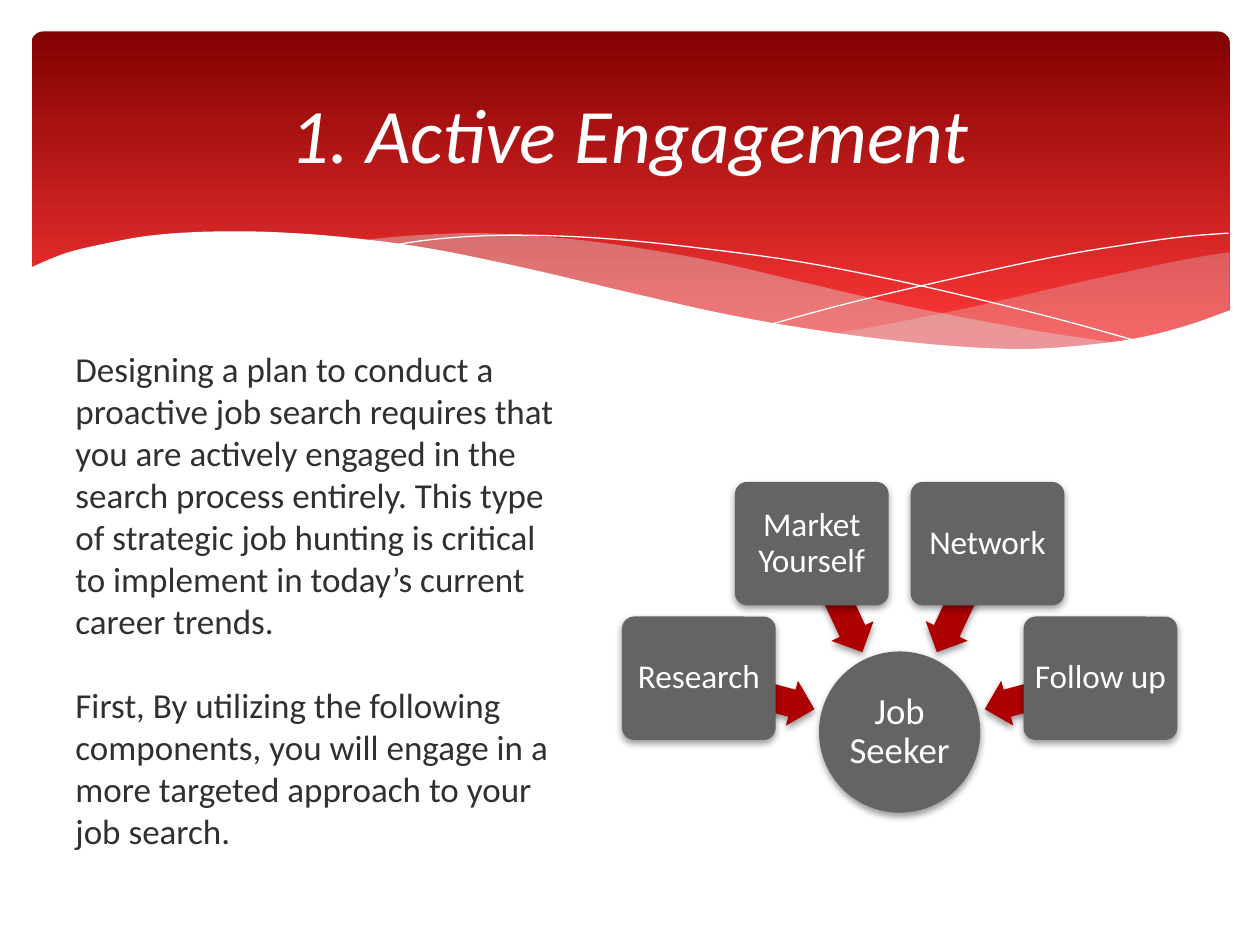
from math import cos, radians, sin

from lxml import etree
from pptx import Presentation
from pptx.dml.color import RGBColor
from pptx.enum.shapes import MSO_SHAPE
from pptx.enum.text import MSO_ANCHOR, PP_ALIGN
from pptx.oxml.ns import qn
from pptx.util import Inches, Pt

ROUNDED, ELLIPSE, LEFT_ARROW = MSO_SHAPE.ROUNDED_RECTANGLE, MSO_SHAPE.OVAL, MSO_SHAPE.LEFT_ARROW
LEFT, CENTER = PP_ALIGN.LEFT, PP_ALIGN.CENTER
TOP, MIDDLE = MSO_ANCHOR.TOP, MSO_ANCHOR.MIDDLE

WHITE = RGBColor(0xFF, 0xFF, 0xFF)
DARK_RED = RGBColor(0x82, 0x01, 0x01)
BRIGHT_RED = RGBColor(0xFE, 0x37, 0x37)
ARROW_RED = RGBColor(0xAD, 0x01, 0x01)
NODE_GRAY = RGBColor(0x64, 0x64, 0x64)
VEIL_GRAY = RGBColor(0xDE, 0xDE, 0xE0)
TEXT_GRAY = RGBColor(0x30, 0x30, 0x30)
FONT = "Calibri"

TITLE = "1. Active Engagement"
BODY = [
    "Designing a plan to conduct a proactive job search requires that you are actively engaged "
    "in the search process entirely. This type of strategic job hunting is critical to implement "
    "in today’s current career trends.",
    "First, By utilizing the following components, you will engage in a more targeted approach "
    "to your job search.",
]
HUB = "Job Seeker"
COMPONENTS = [("Research", 195), ("Market Yourself", 245), ("Network", 295), ("Follow up", 345)]

HUB_CENTER = (7.14, 5.81)
HUB_SIZE = (1.28, 1.28)
BOX_SIZE, BOX_RADIUS = (1.22, 0.98), 1.65
ARROW_SIZE, ARROW_RADIUS = (0.95, 0.37), 1.175

RIGHT_VEIL = [
    [(9.76, 2), (9.35, 2.07), (8.61, 2.23), (7.79, 2.42), (7.06, 2.57), (6.61, 2.65)],
    [(6.61, 2.65), (7.05, 2.71), (7.57, 2.76), (8.03, 2.78), (8.54, 2.76), (8.97, 2.7),
     (9.35, 2.62), (9.76, 2.47)],
]
LEFT_VEIL = [
    [(8.93, 2.73), (8.37, 2.65), (7.75, 2.54), (7.06, 2.4), (6.29, 2.22), (5.69, 2.08),
     (5.14, 1.98), (4.65, 1.91), (4.2, 1.87), (3.8, 1.85), (3.44, 1.86), (3.13, 1.88),
     (2.86, 1.91)],
    [(2.86, 1.91), (3.42, 1.99), (4.04, 2.11), (4.91, 2.32), (5.66, 2.48), (6.34, 2.61),
     (6.95, 2.7), (7.48, 2.76), (7.96, 2.78), (8.38, 2.78), (8.93, 2.73)],
]
FALLING_LINE = [
    [(3.09, 1.95), (3.44, 1.9), (3.87, 1.87), (4.33, 1.87), (4.89, 1.9), (5.56, 1.97),
     (6.36, 2.08), (7.27, 2.26), (8.31, 2.51), (9.07, 2.72)],
]
RISING_LINE = [
    [(6.13, 2.57), (6.72, 2.41), (7.48, 2.23), (8.36, 2.04), (8.95, 1.94), (9.38, 1.88),
     (9.75, 1.85)],
]
WHITE_WAVE = [
    [(9.77, 2.46), (9.4, 2.59), (8.99, 2.69), (8.5, 2.75), (8.09, 2.77), (7.61, 2.75),
     (7.08, 2.7), (6.48, 2.62), (5.79, 2.5), (5.03, 2.33), (4.18, 2.13), (3.4, 1.97),
     (2.71, 1.88), (2.11, 1.84), (1.61, 1.84), (1.19, 1.87), (0.85, 1.93), (0.52, 2.01),
     (0.23, 2.13)],
    [(0.23, 3.29), (9.77, 3.29)],
]
VEILS = [(RIGHT_VEIL, 29), (LEFT_VEIL, 40)]
LINES = [FALLING_LINE, RISING_LINE]


def write(frame, paragraphs, size=20, color=WHITE, italic=False, align=CENTER, anchor=MIDDLE,
          line_spacing=1.0, gap=0, inset=None):
    frame.word_wrap = True
    frame.vertical_anchor = anchor
    if inset is not None:
        frame.margin_left = frame.margin_right = Inches(inset)
        frame.margin_top = frame.margin_bottom = Inches(inset)
    for index, text in enumerate(paragraphs):
        paragraph = frame.add_paragraph() if index else frame.paragraphs[0]
        paragraph.alignment = align
        paragraph.line_spacing = line_spacing
        paragraph.space_before = Pt(gap if index else 0)
        run = paragraph.add_run()
        run.text = text
        run.font.name = FONT
        run.font.size = Pt(size)
        run.font.italic = italic
        run.font.color.rgb = color


def smooth(points, steps=5):
    if len(points) < 3:
        return points
    padded = [points[0], *points, points[-1]]
    curve = [points[0]]
    for before, start, end, after in zip(padded, padded[1:], padded[2:], padded[3:]):
        for step in range(1, steps + 1):
            t = step / steps
            curve.append(tuple(
                b + (c - a) * t / 2 + (a - 2.5 * b + 2 * c - d / 2) * t ** 2
                + (1.5 * (b - c) + (d - a) / 2) * t ** 3
                for a, b, c, d in zip(before, start, end, after)))
    return curve


def add_outline(shapes, edges, fill=None, opacity=100):
    points = [(Inches(x), Inches(y)) for edge in edges for x, y in smooth(edge)]
    builder = shapes.build_freeform(*points[0])
    builder.add_line_segments(points[1:], close=fill is not None)
    shape = builder.convert_to_shape()
    shape.shadow.inherit = False
    if fill is None:
        shape.fill.background()
        shape.line.color.rgb = WHITE
        shape.line.width = Pt(0)
        return
    shape.fill.solid()
    shape.fill.fore_color.rgb = fill
    shape.line.fill.background()
    if opacity < 100:
        color = next(shape._element.iter(qn("a:srgbClr")))
        etree.SubElement(color, qn("a:alpha"), val=str(opacity * 1000))


def add_node(shapes, kind, size, fill, radius=0, angle=0):
    width, height = size
    left = HUB_CENTER[0] + radius * cos(radians(angle)) - width / 2
    top = HUB_CENTER[1] + radius * sin(radians(angle)) - height / 2
    shape = shapes.add_shape(kind, Inches(left), Inches(top), Inches(width), Inches(height))
    shape.fill.solid()
    shape.fill.fore_color.rgb = fill
    shape.line.fill.background()
    shape.shadow.inherit = False
    effects = shape._element.spPr.find(qn("a:effectLst"))
    shadow = etree.SubElement(effects, qn("a:outerShdw"), blurRad=str(Pt(4)), dist=str(Pt(2)),
                              dir="5400000", rotWithShape="0")
    color = etree.SubElement(shadow, qn("a:srgbClr"), val="000000")
    etree.SubElement(color, qn("a:alpha"), val="38000")
    return shape


def add_banner(shapes):
    panel = shapes.add_shape(ROUNDED, Inches(0.25), Inches(0.25), Inches(9.51), Inches(2.7))
    panel.adjustments[0] = 0.034
    panel.shadow.inherit = False
    panel.line.fill.background()
    panel.fill.gradient()
    panel.fill.gradient_angle = 270
    for stop, position, color in zip(panel.fill.gradient_stops, (0, 0.9), (DARK_RED, BRIGHT_RED)):
        stop.position = position
        stop.color.rgb = color
    for edges, opacity in VEILS:
        add_outline(shapes, edges, VEIL_GRAY, opacity)
    for edges in LINES:
        add_outline(shapes, edges)
    add_outline(shapes, WHITE_WAVE, WHITE)


def add_diagram(shapes):
    hub = add_node(shapes, ELLIPSE, HUB_SIZE, NODE_GRAY)
    write(hub.text_frame, [HUB], size=21, line_spacing=0.9, inset=0.01)
    for label, angle in COMPONENTS:
        arrow = add_node(shapes, LEFT_ARROW, ARROW_SIZE, ARROW_RED, ARROW_RADIUS, angle)
        arrow.rotation = angle
        arrow.adjustments[0] = 0.6
        arrow.adjustments[1] = 0.5
        box = add_node(shapes, ROUNDED, BOX_SIZE, NODE_GRAY, BOX_RADIUS, angle)
        box.adjustments[0] = 0.1
        write(box.text_frame, [label], size=19, line_spacing=0.9, inset=0.04)


def main():
    presentation = Presentation()
    presentation.slide_width, presentation.slide_height = Inches(10), Inches(7.5)
    slide = presentation.slides.add_slide(presentation.slide_layouts[5])
    shapes = slide.shapes
    add_banner(shapes)
    add_diagram(shapes)

    title = shapes.title
    title.left, title.top, title.width, title.height = map(Inches, (0.5, 0.37, 9, 1.37))
    write(title.text_frame, [TITLE], size=44, italic=True)
    shapes._spTree.append(title._element)

    body = shapes.add_textbox(Inches(0.5), Inches(2.71), Inches(4.11), Inches(4.14))
    write(body.text_frame, BODY, color=TEXT_GRAY, align=LEFT, anchor=TOP, gap=24)
    presentation.save("out.pptx")


if __name__ == "__main__":
    main()
